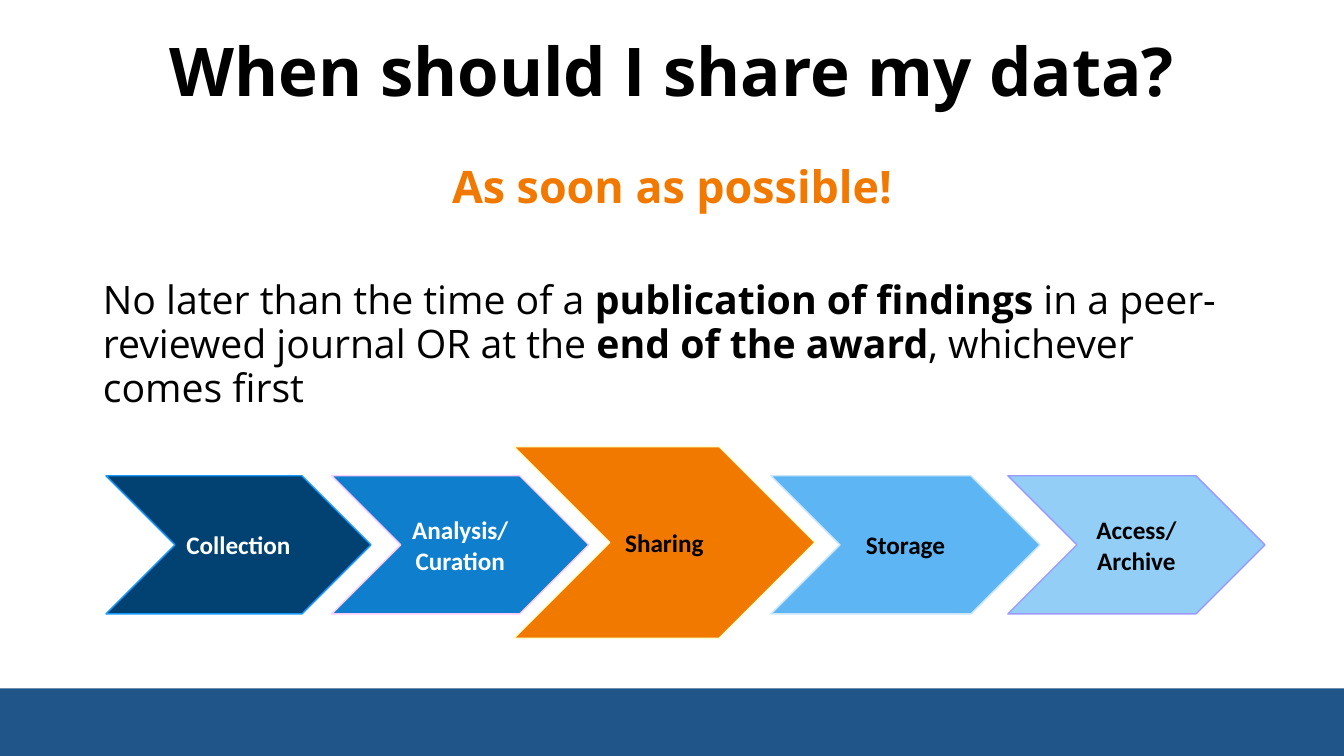
from lxml.etree import SubElement
from pptx import Presentation
from pptx.dml.color import RGBColor
from pptx.enum.shapes import MSO_SHAPE
from pptx.enum.text import MSO_ANCHOR, MSO_AUTO_SIZE, PP_ALIGN
from pptx.oxml.ns import qn
from pptx.util import Cm, Pt

WIDTH, HEIGHT = 33.87, 19.05
BAR_HEIGHT = 1.7
BLACK, WHITE, ORANGE, NAVY = "000000", "FFFFFF", "F27900", "20558A"

TITLE = "When should I share my data?"
ANSWER = "As soon as possible!"
DEADLINE = [  # text, bold
    ("No later than the time of a ", False),
    ("publication of findings ", True),
    ("in a peer-reviewed journal OR at the ", False),
    ("end of the award", True),
    (", whichever comes first", False),
]
STAGES = [  # label, left, middle, width, height, fill, line, text colour
    ("Collection", 2.67, 13.73, 6.68, 3.48, "014273", "1599FD", WHITE),
    ("Analysis/ Curation", 8.36, 13.73, 6.48, 3.48, "0F7FCD", "FFCCFF", WHITE),
    ("Sharing", 12.95, 13.67, 7.59, 4.83, ORANGE, "FFFFCC", BLACK),
    ("Storage", 19.43, 13.73, 6.78, 3.48, "5DB5F3", "C9E6FB", BLACK),
    ("Access/ Archive", 25.4, 13.73, 6.48, 3.48, "93CEF7", "9999FF", BLACK),
]


def color(value):
    return RGBColor.from_string(value)


def place(sp, left, top, width, height):
    sp.left, sp.top, sp.width, sp.height = map(Cm, (left, top, width, height))


def add_run(p, text, size, text_color, bold=True, font="Open Sans"):
    r = p.add_run()
    r.text = text
    r.font.name, r.font.size, r.font.bold = font, Pt(size), bold
    r.font.color.rgb = color(text_color)


def format_paragraph(p, align, line_spacing, before=0):
    p.alignment = align
    p.line_spacing = line_spacing
    p.space_before = Pt(before)


def remove_bullet(p):
    pPr = p._p.get_or_add_pPr()
    pPr.set("marL", "0")
    pPr.set("indent", "0")
    SubElement(pPr, qn("a:buNone"))


def add_filled(shapes, kind, left, top, width, height, fill):
    sp = shapes.add_shape(kind, *map(Cm, (left, top, width, height)))
    sp.shadow.inherit = False
    sp.fill.solid()
    sp.fill.fore_color.rgb = color(fill)
    return sp


def add_title(s):
    sp = s.shapes.title
    place(sp, 2.34, 0.05, 29.21, 3.68)
    tf = sp.text_frame
    tf.auto_size = MSO_AUTO_SIZE.NONE
    tf.vertical_anchor = MSO_ANCHOR.MIDDLE
    p = tf.paragraphs[0]
    format_paragraph(p, PP_ALIGN.CENTER, 0.9)
    add_run(p, TITLE, 48, BLACK)


def add_body(s):
    sp = s.placeholders[1]
    place(sp, 2.34, 3.97, 29.21, 13.3)
    tf = sp.text_frame
    tf.auto_size = MSO_AUTO_SIZE.NONE
    answer, deadline = tf.paragraphs[0], tf.add_paragraph()
    for p in (answer, deadline):
        remove_bullet(p)
    format_paragraph(answer, PP_ALIGN.CENTER, 0.94)
    add_run(answer, ANSWER, 32, ORANGE)
    format_paragraph(deadline, PP_ALIGN.LEFT, 0.94, before=47)
    for text, bold in DEADLINE:
        add_run(deadline, text, 28, BLACK, bold)


def add_stages(s):
    group = s.shapes.add_group_shape()
    for label, left, middle, width, height, fill, line, text_color in STAGES:
        sp = add_filled(group.shapes, MSO_SHAPE.CHEVRON,
                        left, middle - height / 2, width, height, fill)
        sp.line.color.rgb = color(line)
        sp.line.width = Pt(1)
        tf = sp.text_frame
        tf.word_wrap = True
        tf.vertical_anchor = MSO_ANCHOR.MIDDLE
        p = tf.paragraphs[0]
        p.alignment = PP_ALIGN.CENTER
        add_run(p, label, 18, text_color, font="Calibri")


def main():
    prs = Presentation()
    prs.slide_width, prs.slide_height = Cm(WIDTH), Cm(HEIGHT)
    s = prs.slides.add_slide(prs.slide_layouts[1])
    add_title(s)
    add_body(s)
    bar = add_filled(s.shapes, MSO_SHAPE.RECTANGLE,
                     0, HEIGHT - BAR_HEIGHT, WIDTH, BAR_HEIGHT, NAVY)
    bar.line.fill.background()
    add_stages(s)
    prs.save("out.pptx")


if __name__ == "__main__":
    main()
